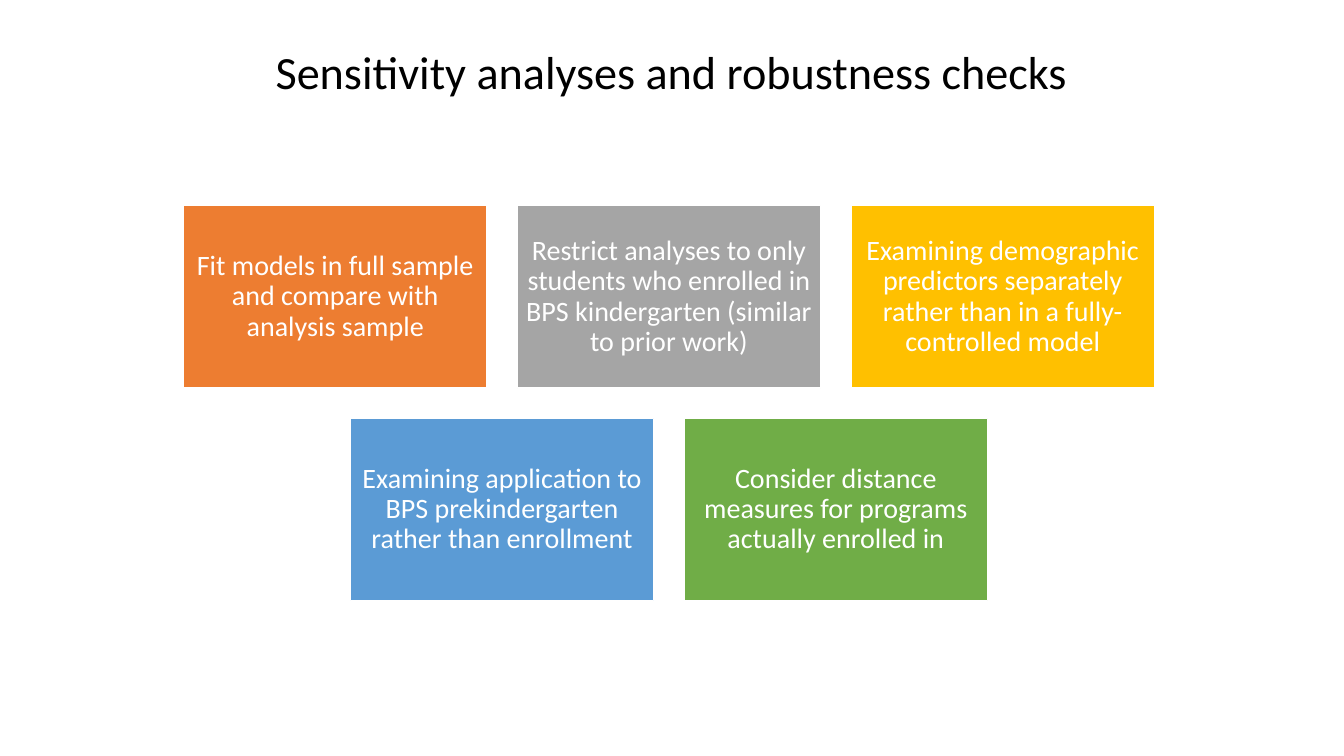
"""Build the slide on sensitivity analyses and robustness checks."""
from dataclasses import dataclass

from pptx import Presentation
from pptx.dml.color import RGBColor
from pptx.enum.shapes import MSO_SHAPE
from pptx.enum.text import MSO_ANCHOR, MSO_AUTO_SIZE, PP_ALIGN
from pptx.slide import Slide
from pptx.text.text import TextFrame
from pptx.util import Inches, Pt

COLORS = {
    "black": "000000",
    "white": "FFFFFF",
    "orange": "ED7D31",
    "gray": "A5A5A5",
    "gold": "FFC000",
    "blue": "5B9BD5",
    "green": "70AD47",
}
FONT = "Calibri"
GRID_LEFT, GRID_TOP = 1.82, 2.04
CARD_W, CARD_H, GAP = 3.01, 1.81, 0.3
INSET = Inches(0.08)


@dataclass
class Card:
    col: float
    row: int
    color: str
    text: str


CARDS = [
    Card(0, 0, "orange", "Fit models in full sample and compare with analysis sample"),
    Card(1, 0, "gray", "Restrict analyses to only students who enrolled in BPS "
                       "kindergarten (similar to prior work)"),
    Card(2, 0, "gold", "Examining demographic predictors separately rather than "
                       "in a fully-controlled model"),
    Card(0.5, 1, "blue", "Examining application to BPS prekindergarten rather than enrollment"),
    Card(1.5, 1, "green", "Consider distance measures for programs actually enrolled in"),
]


def rgb(name: str) -> RGBColor:
    return RGBColor.from_string(COLORS[name])


def write(tf: TextFrame, text: str, size: float, color: str) -> None:
    tf.text = text
    tf.word_wrap = True
    tf.auto_size = MSO_AUTO_SIZE.NONE
    tf.vertical_anchor = MSO_ANCHOR.MIDDLE
    p = tf.paragraphs[0]
    p.alignment = PP_ALIGN.CENTER
    p.line_spacing = 0.9
    font = p.runs[0].font
    font.name = FONT
    font.size = Pt(size)
    font.color.rgb = rgb(color)


def add_title(s: Slide, text: str) -> None:
    sp = s.shapes.title
    sp.left, sp.top = Inches(2.35), Inches(0.26)
    sp.width, sp.height = Inches(8.62), Inches(0.95)
    write(sp.text_frame, text, 33, "black")


def add_card(s: Slide, card: Card) -> None:
    sp = s.shapes.add_shape(
        MSO_SHAPE.RECTANGLE,
        Inches(GRID_LEFT + card.col * (CARD_W + GAP)),
        Inches(GRID_TOP + card.row * (CARD_H + GAP)),
        Inches(CARD_W),
        Inches(CARD_H),
    )
    sp.shadow.inherit = False
    sp.fill.solid()
    sp.fill.fore_color.rgb = rgb(card.color)
    sp.line.color.rgb = rgb("white")
    sp.line.width = Pt(1)
    tf = sp.text_frame
    tf.margin_left = tf.margin_right = tf.margin_top = tf.margin_bottom = INSET
    write(tf, card.text, 20, "white")


def main() -> None:
    prs = Presentation()
    prs.slide_width, prs.slide_height = Inches(13.33), Inches(7.5)
    s = prs.slides.add_slide(prs.slide_layouts[5])
    add_title(s, "Sensitivity analyses and robustness checks")
    for card in CARDS:
        add_card(s, card)
    prs.save("out.pptx")


if __name__ == "__main__":
    main()
